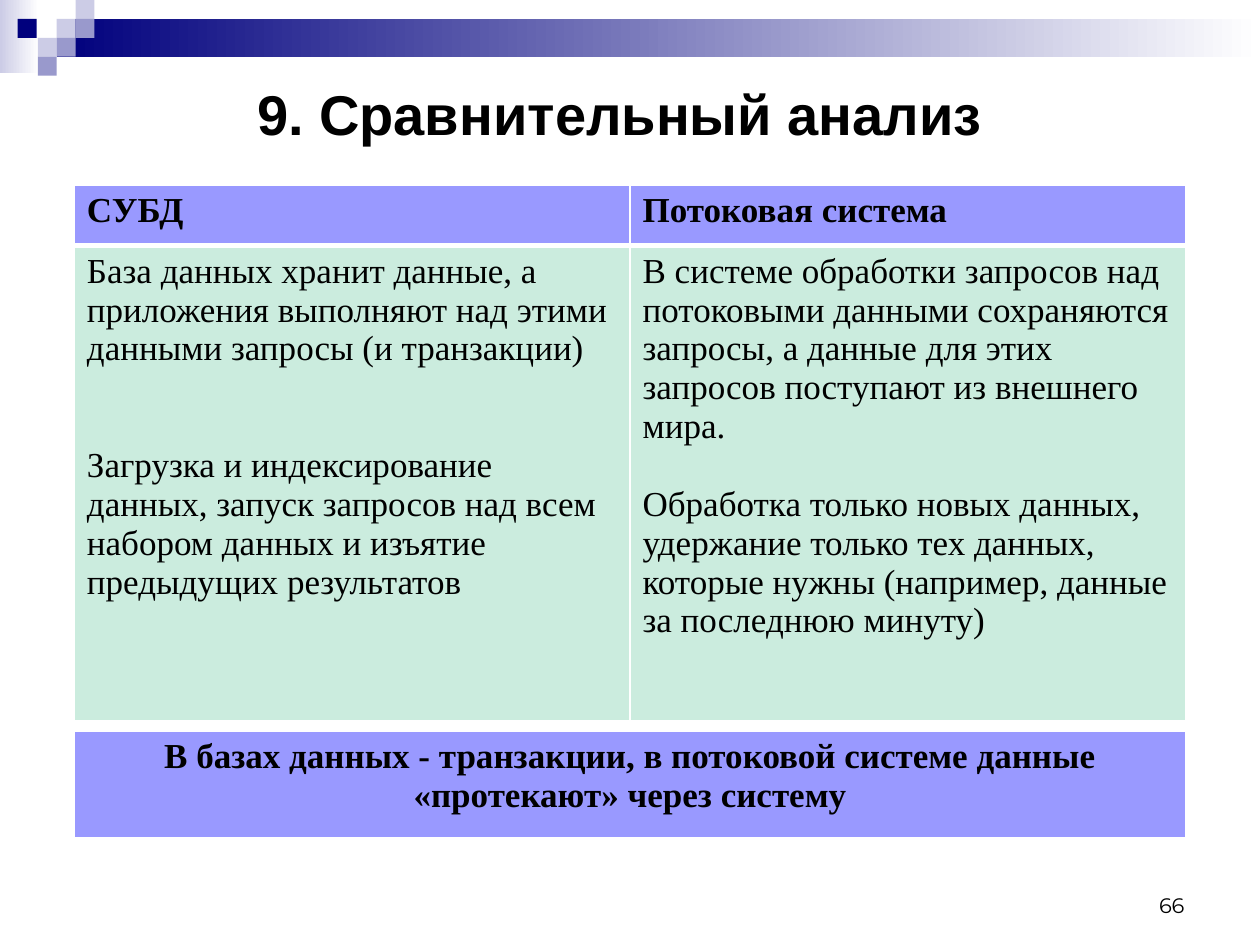
from lxml import etree
from pptx import Presentation
from pptx.dml.color import RGBColor
from pptx.enum.shapes import MSO_SHAPE
from pptx.enum.text import MSO_ANCHOR, PP_ALIGN
from pptx.oxml.ns import qn
from pptx.util import Inches, Pt

RECT = MSO_SHAPE.RECTANGLE
LEFT, CENTER, RIGHT = PP_ALIGN.LEFT, PP_ALIGN.CENTER, PP_ALIGN.RIGHT
MIDDLE, BOTTOM = MSO_ANCHOR.MIDDLE, MSO_ANCHOR.BOTTOM
COLORS = {"navy": "00007D", "pale": "CCCCE6", "lilac": "9999CC", "white": "FFFFFF",
          "black": "000000", "header": "9999FF", "body": "CBECDE"}
RGB = {name: RGBColor.from_string(value) for name, value in COLORS.items()}
SERIF = "Times New Roman"
LINE = 22.2


def write(p, text, size, font, bold, align):
    p.text = text
    p.alignment = align
    for r in p.runs:
        r.font.size = Pt(size)
        r.font.name = font
        r.font.bold = bold
        r.font.color.rgb = RGB["black"]


def style_cell(cell, color, top, bottom):
    tcPr = cell._tc.get_or_add_tcPr()
    for side, width in (("L", 1), ("R", 1), ("T", top), ("B", bottom)):
        ln = etree.SubElement(tcPr, qn(f"a:ln{side}"), w=str(Pt(width)))
        fill = etree.SubElement(ln, qn("a:solidFill"))
        etree.SubElement(fill, qn("a:srgbClr"), val=COLORS["white"])
    cell.fill.solid()
    cell.fill.fore_color.rgb = RGB[color]


prs = Presentation()
prs.slide_width, prs.slide_height = Inches(10), Inches(7.5)
s = prs.slides.add_slide(prs.slide_layouts[6])

bars = [(0, 0, 0.31, 0.58, "pale"), (0.45, 0.15, 9.55, 0.3, "navy")]
squares = [(0.45, 0.15, "pale"), (0.6, 0, "pale"), (0.6, 0.15, "lilac"),
           (0.3, 0.3, "pale"), (0.14, 0.15, "navy"), (0.45, 0.3, "lilac"),
           (0.3, 0.45, "lilac")]
for x, y, w, h, color in bars + [(x, y, 0.15, 0.15, c) for x, y, c in squares]:
    sp = s.shapes.add_shape(RECT, Inches(x), Inches(y), Inches(w), Inches(h))
    sp.shadow.inherit = False
    sp.line.fill.background()
    if w > 0.15:
        sp.fill.gradient()
        sp.fill.gradient_angle = 0
        for stop, position, name in zip(sp.fill.gradient_stops, (0, 1), (color, "white")):
            stop.position = position
            stop.color.rgb = RGB[name]
    else:
        sp.fill.solid()
        sp.fill.fore_color.rgb = RGB[color]

labels = [
    (0.67, 0.48, 8.5, 0.83, MIDDLE, "9. Сравнительный анализ", 32, "Arial", True, CENTER),
    (7.17, 6.83, 2.33, 0.5, BOTTOM, "66", 12, "Montserrat", False, RIGHT),
]
for x, y, w, h, anchor, text, size, font, bold, align in labels:
    tf = s.shapes.add_textbox(Inches(x), Inches(y), Inches(w), Inches(h)).text_frame
    tf.word_wrap = True
    tf.vertical_anchor = anchor
    write(tf.paragraphs[0], text, size, font, bold, align)

columns = [
    ("СУБД", 2 * LINE,
     "База данных хранит данные, а приложения выполняют над этими данными запросы (и транзакции)",
     "Загрузка и индексирование данных, запуск запросов над всем набором данных "
     "и изъятие предыдущих результатов"),
    ("Потоковая система", LINE,
     "В системе обработки запросов над потоковыми данными сохраняются запросы, "
     "а данные для этих запросов поступают из внешнего мира.",
     "Обработка только новых данных, удержание только тех данных, которые нужны "
     "(например, данные за последнюю минуту)"),
]
table = s.shapes.add_table(2, 2, Inches(0.59), Inches(1.47), Inches(8.82), Inches(4.25)).table
table.rows[0].height, table.rows[1].height = Inches(0.48), Inches(3.77)
for col, (heading, gap, first, second) in enumerate(columns):
    head, body = table.cell(0, col), table.cell(1, col)
    style_cell(head, "header", 1, 3)
    style_cell(body, "body", 3, 1)
    write(head.text_frame.paragraphs[0], heading, 20, SERIF, True, LEFT)
    write(body.text_frame.paragraphs[0], first, 20, SERIF, False, LEFT)
    p = body.text_frame.add_paragraph()
    p.space_before = Pt(gap)
    write(p, second, 20, SERIF, False, LEFT)

summary = s.shapes.add_table(1, 1, Inches(0.59), Inches(5.8), Inches(8.82), Inches(0.86)).table
cell = summary.cell(0, 0)
style_cell(cell, "header", 1, 3)
write(cell.text_frame.paragraphs[0],
      "В базах данных - транзакции, в потоковой системе данные «протекают» через систему",
      20, SERIF, True, CENTER)

prs.save("out.pptx")
